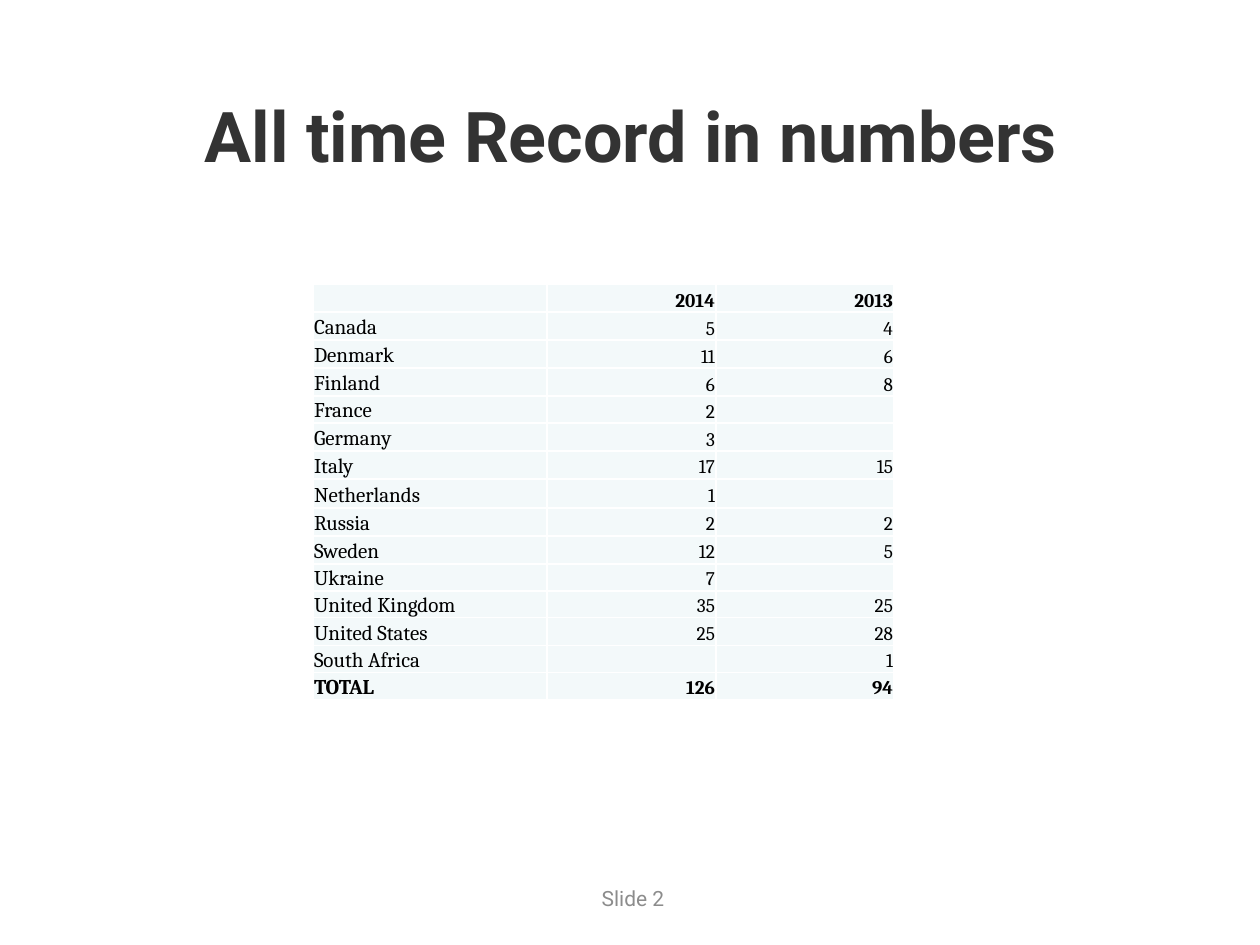
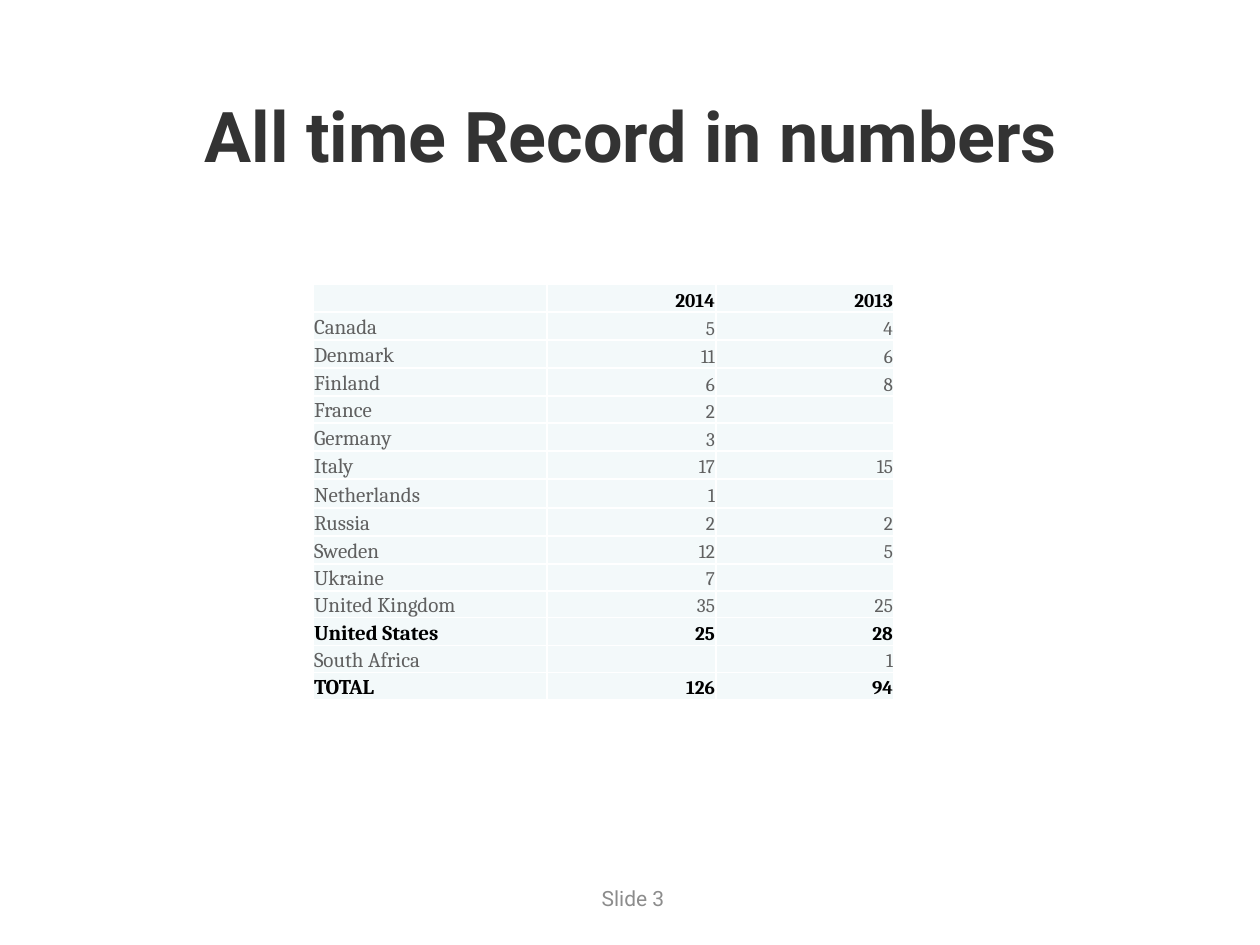
from lxml import etree
from pptx import Presentation
from pptx.dml.color import RGBColor
from pptx.enum.text import MSO_ANCHOR, PP_ALIGN
from pptx.oxml.ns import qn
from pptx.util import Emu, Pt

LEFT, CENTER, RIGHT = PP_ALIGN.LEFT, PP_ALIGN.CENTER, PP_ALIGN.RIGHT
TOP, MIDDLE, BOTTOM = MSO_ANCHOR.TOP, MSO_ANCHOR.MIDDLE, MSO_ANCHOR.BOTTOM
EMU_PER_PX = 914400 / 126

BLACK, GREY, WHITE, CELL_FILL = "000000", "606060", "FFFFFF", "F3F9FA"
TITLE_STYLE = {"name": "Roboto", "size": Pt(40), "bold": True}
FOOTER_STYLE = {"name": "Roboto", "size": Pt(12), "bold": False}
LABEL_SIZE, NUMBER_SIZE = Pt(12), Pt(11)

COLUMN_WIDTHS = [234, 169, 178]
ROW_HEIGHTS = [28, 28, 28, 28, 27, 28, 28, 29, 28, 28, 27, 27, 28, 27, 27]
RECORD = [
    ("", "2014", "2013"),
    ("Canada", "5", "4"),
    ("Denmark", "11", "6"),
    ("Finland", "6", "8"),
    ("France", "2", ""),
    ("Germany", "3", ""),
    ("Italy", "17", "15"),
    ("Netherlands", "1", ""),
    ("Russia", "2", "2"),
    ("Sweden", "12", "5"),
    ("Ukraine", "7", ""),
    ("United Kingdom", "35", "25"),
    ("United States", "25", "28"),
    ("South Africa", "", "1"),
    ("TOTAL", "126", "94"),
]


def px(length):
    return Emu(round(length * EMU_PER_PX))


def color(value):
    return RGBColor.from_string(value)


def apply(target, values):
    for name, value in values.items():
        setattr(target, name, value)


def write(para, text, align, style, ink):
    para.alignment = align
    span = para.add_run()
    span.text = text
    apply(span.font, style)
    span.font.color.rgb = color(ink)


def add_text(page, area, text, anchor, style, ink):
    box = page.shapes.add_textbox(*map(px, area))
    apply(box.text_frame, {"word_wrap": True, "vertical_anchor": anchor})
    write(box.text_frame.paragraphs[0], text, CENTER, style, ink)


def set_borders(cell):
    properties = cell._tc.get_or_add_tcPr()
    for side in ("lnL", "lnR", "lnT", "lnB"):
        line = etree.SubElement(properties, qn(f"a:{side}"), w=str(Pt(1)))
        fill = etree.SubElement(line, qn("a:solidFill"))
        etree.SubElement(fill, qn("a:srgbClr"), val=WHITE)


def fill_cell(cell, text, align, style, ink):
    set_borders(cell)
    cell.fill.solid()
    cell.fill.fore_color.rgb = color(CELL_FILL)
    apply(cell, {
        "margin_left": px(1), "margin_right": px(1), "margin_top": px(1),
        "margin_bottom": 0, "vertical_anchor": BOTTOM,
    })
    para = cell.text_frame.paragraphs[0]
    if text:
        write(para, text, align, style, ink)
    else:
        size = str(int(style["size"].pt * 100))
        etree.SubElement(para._p, qn("a:endParaRPr"), sz=size)


def add_record_table(page, bold_rows, body_ink):
    frame = page.shapes.add_table(
        len(RECORD), len(COLUMN_WIDTHS), px(313), px(284),
        px(sum(COLUMN_WIDTHS)), px(sum(ROW_HEIGHTS)))
    table = frame.table
    apply(table, {"first_row": False, "horz_banding": False})
    for column, width in zip(table.columns, COLUMN_WIDTHS):
        column.width = px(width)
    for row, height, texts in zip(table.rows, ROW_HEIGHTS, RECORD):
        row.height = px(height)
        bold = texts[0] in bold_rows
        ink = BLACK if bold else body_ink
        for index, (cell, text) in enumerate(zip(row.cells, texts)):
            is_label = index == 0 and text
            style = {"name": "Cambria", "bold": bold,
                     "size": LABEL_SIZE if is_label else NUMBER_SIZE}
            fill_cell(cell, text, LEFT if is_label else RIGHT, style, ink)


def add_record_page(deck, number, bold_rows, body_ink):
    page = deck.slides.add_slide(deck.slide_layouts[6])
    add_text(page, (491, 873, 284, 50), f"Slide {number}", MIDDLE,
             FOOTER_STYLE, "8C8C8C")
    add_text(page, (105, 86, 1052, 127), "All time Record in numbers", TOP,
             TITLE_STYLE, "333333")
    add_record_table(page, bold_rows, body_ink)


def main():
    deck = Presentation()
    apply(deck, {"slide_width": px(1260), "slide_height": px(945)})
    add_record_page(deck, 2, ("", "TOTAL"), BLACK)
    add_record_page(deck, 3, ("", "United States", "TOTAL"), GREY)
    deck.save("out.pptx")


if __name__ == "__main__":
    main()
